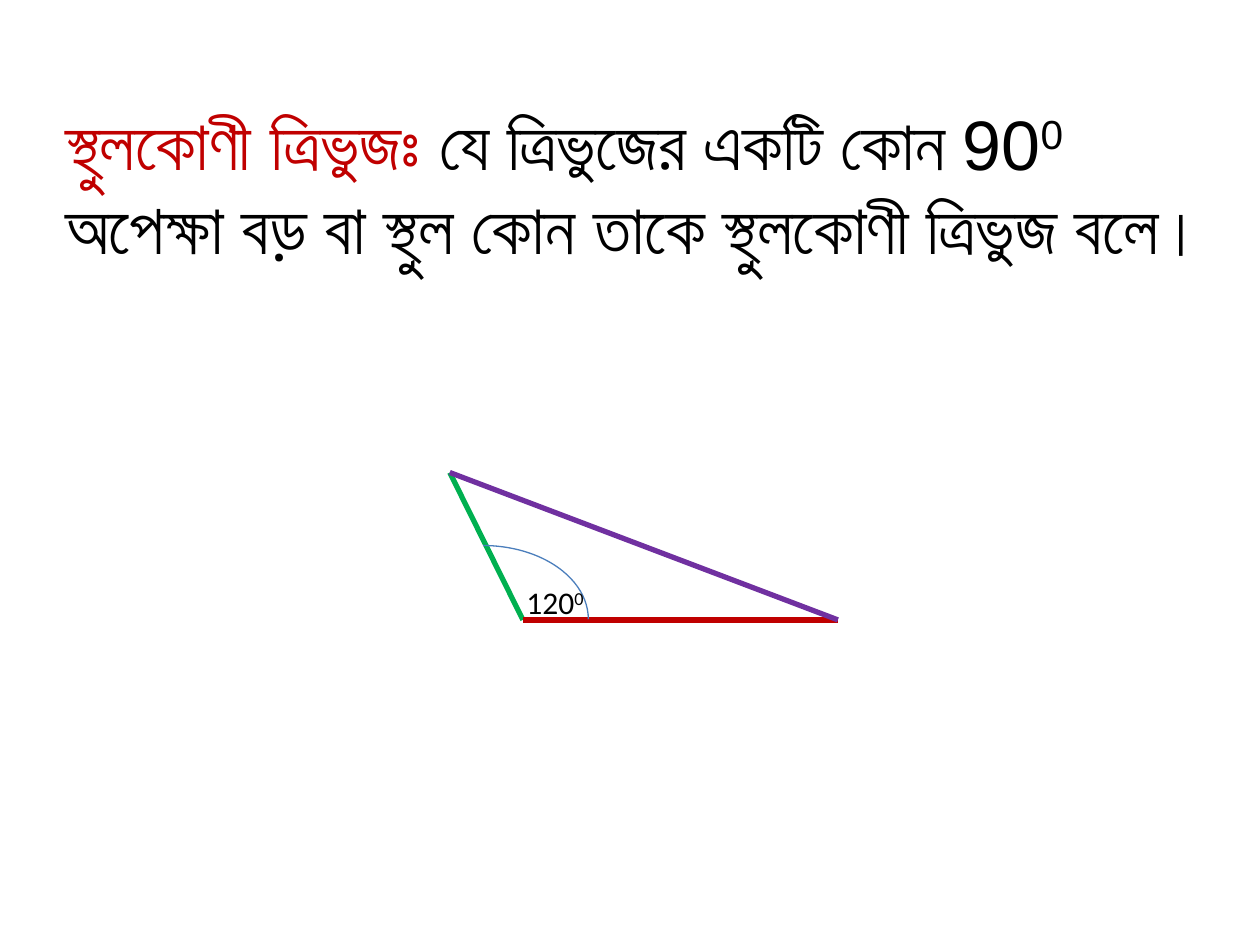
"""Build a slide defining the obtuse triangle, with a 120 degree example."""
import pptx
import pptx.dml.color
import pptx.enum.shapes
import pptx.enum.text
import pptx.oxml.ns
import pptx.util
from lxml import etree

COLORS = {
    "term": "C00000",
    "text": "000000",
    "side": "00B050",
    "base": "C00000",
    "longest": "7030A0",
    "arc": "4B7EBC",
}
WIDTH = pptx.util.Inches(10)
HEIGHT = pptx.util.Inches(7.5)
COLUMNS = 100


def grid(*cells):
    """Turn square grid cells, 100 to the slide's width, into lengths."""
    return [round(cell * WIDTH / COLUMNS) for cell in cells]


def rgb(name):
    """Look up a named colour."""
    return pptx.dml.color.RGBColor.from_string(COLORS[name])


def style_line(sp, color, width):
    """Set the colour and width of an outline."""
    sp.line.color.rgb = rgb(color)
    sp.line.width = pptx.util.Pt(width)


def add_text(s, box, runs, font, size):
    """Add a text box from (text, colour, bold, raised) runs."""
    tf = s.shapes.add_textbox(*grid(*box)).text_frame
    tf.word_wrap = True
    tf.auto_size = pptx.enum.text.MSO_AUTO_SIZE.SHAPE_TO_FIT_TEXT
    p = tf.paragraphs[0]
    for text, color, bold, raised in runs:
        r = p.add_run()
        r.text = text
        r.font.name = font
        r.font.size = pptx.util.Pt(size)
        r.font.bold = bold
        r.font.color.rgb = rgb(color)
        if raised:
            r.font._element.set("baseline", "30000")


def add_side(s, start, end, color):
    """Draw one side of the triangle."""
    sp = s.shapes.add_connector(
        pptx.enum.shapes.MSO_CONNECTOR.STRAIGHT, *grid(*start, *end))
    style_line(sp, color, 3)
    etree.SubElement(sp._element.spPr, pptx.oxml.ns.qn("a:effectLst"))


def add_arc(s, box):
    """Draw the arc that marks the angle."""
    sp = s.shapes.add_shape(pptx.enum.shapes.MSO_SHAPE.ARC, *grid(*box))
    sp.shadow.inherit = False
    sp.fill.background()
    style_line(sp, "arc", 0.75)


def main():
    """Build and save the slide."""
    prs = pptx.Presentation()
    prs.slide_width, prs.slide_height = WIDTH, HEIGHT
    s = prs.slides.add_slide(prs.slide_layouts[6])

    add_text(s, (4.2, 7.5, 93.3, 21.2), [
        ("স্থুলকোণী ত্রিভুজঃ ", "term", True, False),
        ("যে ত্রিভুজের একটি কোন 90", "text", False, False),
        ("0 ", "text", False, True),
        ("অপেক্ষা বড় বা স্থুল কোন তাকে স্থুলকোণী ত্রিভুজ বলে।", "text", False, False),
    ], "Arial", 40)

    vertex, top, right = (41.5, 49.2), (35.7, 37.5), (66.5, 49.2)
    add_side(s, vertex, top, "side")
    add_side(s, vertex, right, "base")
    add_side(s, top, right, "longest")
    add_arc(s, (30, 43.3, 16.7, 11.7))
    add_text(s, (40.8, 45.8, 10, 4), [
        ("120", "text", False, False),
        ("0", "text", False, True),
    ], "Calibri", 18)

    prs.save("out.pptx")


if __name__ == "__main__":
    main()
